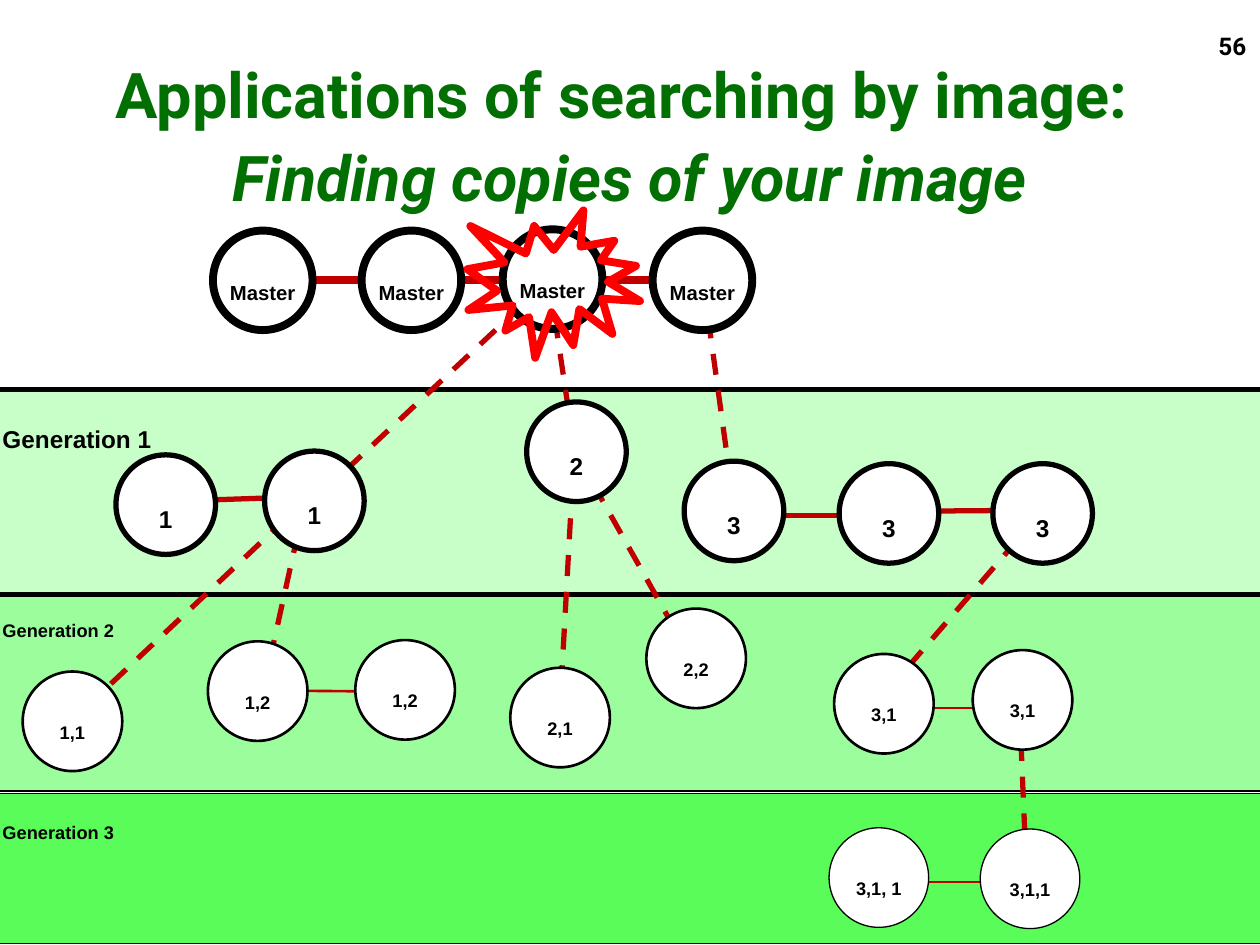
from pptx import Presentation
from pptx.dml.color import RGBColor
from pptx.enum.dml import MSO_LINE
from pptx.enum.shapes import MSO_CONNECTOR, MSO_SHAPE
from pptx.enum.text import MSO_ANCHOR as Anchor, MSO_AUTO_SIZE, PP_ALIGN as Align
from pptx.oxml.ns import qn
from pptx.util import Inches, Pt
from lxml.etree import SubElement

COLORS = {
    "title": "026F02", "ink": "000000", "node": "FFFFFF", "link": "C00000",
    "burst": "FF0000", "generation 1": "C8FEC8", "generation 2": "9BFD9B",
    "generation 3": "59FC59",
}

presentation = Presentation()
presentation.slide_width, presentation.slide_height = Inches(10), Inches(7.5)
slide = presentation.slides.add_slide(presentation.slide_layouts[5])
shapes = slide.shapes

# Grid of 100 columns by 75 rows
column = presentation.slide_width / 100
row = presentation.slide_height / 75


def color(name):
    return RGBColor.from_string(COLORS[name])


def write(paragraph, text, font="Arial", size=18, ink="ink", italic=None,
          lowered=True, align=Align.CENTER):
    paragraph.alignment = align
    run = paragraph.add_run()
    run.text = text
    run.font.name, run.font.size = font, Pt(size)
    run.font.bold, run.font.italic = True, italic
    run.font.color.rgb = color(ink)
    if lowered:
        run.font._element.set("baseline", "-25000")


# Title
title = shapes.title
title.left, title.top = int(4.1 * column), int(2.5 * row)
title.width, title.height = int(91.8 * column), int(16.2 * row)
frame = title.text_frame
frame.word_wrap, frame.auto_size = True, MSO_AUTO_SIZE.NONE
frame.vertical_anchor = Anchor.TOP
frame.margin_left = frame.margin_right = frame.margin_bottom = Inches(0.08)
frame.margin_top = Inches(0.13)
paragraph = frame.paragraphs[0]
paragraph.line_spacing, paragraph.space_before = 1.1, Pt(0)
heading = {"font": "Roboto", "size": 36, "ink": "title", "lowered": False}
write(paragraph, "Applications of searching by image: ", **heading)
paragraph.add_line_break()
write(paragraph, "Finding copies of your image", italic=True, **heading)

# Page number
number = shapes.add_textbox(int(79.1 * column), 0, int(20.8 * column), int(5 * row))
number.text_frame.word_wrap = False
number.text_frame.vertical_anchor = Anchor.MIDDLE
write(number.text_frame.paragraphs[0], "56", font="Roboto", size=24, align=Align.RIGHT)

# Generation bands: label, top, height, outline, text size
bands = [
    ("Generation 2", 47, 15.8, 1, 18),
    ("Generation 3", 63, 11.9, 0.75, 18),
    ("Generation 1", 30.9, 16.3, 3, 24),
]
for label, top, height, outline, size in bands:
    band = shapes.add_shape(MSO_SHAPE.RECTANGLE, int(-1.2 * column), int(top * row),
                            int(102.4 * column), int(height * row))
    band.shadow.inherit = False
    band.fill.solid()
    band.fill.fore_color.rgb = color(label.lower())
    band.line.color.rgb, band.line.width = color("ink"), Pt(outline)
    band.text_frame.vertical_anchor = Anchor.TOP
    band.text_frame.margin_left = Inches(0.14)
    write(band.text_frame.paragraphs[0], label, size=size, align=Align.LEFT)

# Links: start column and row, end column and row, by line width and dash
links = {
    (3, True): [  # parent to child
        (80.9, 55.8, 81.5, 70), (24.3, 39.4, 20.9, 54.7), (24.9, 39.1, 5.7, 57.2),
        (45.6, 35.3, 44.4, 57), (45.6, 35.8, 54.9, 52.3), (82.7, 40.6, 70.2, 55.1),
        (43.6, 22.2, 24.9, 39.7), (43.6, 22.3, 45.6, 35.8), (55.8, 22.3, 58.3, 40.5)],
    (4.5, False): [(43.8, 22.2, 55.3, 22.2), (43.8, 22.2, 20.7, 22.2)],
    (3, False): [(54.9, 40.9, 68.8, 40.9), (68.8, 40.6, 81.9, 40.5),
                 (24.9, 39.4, 13.1, 39.8)],
    (1.5, False): [(69.8, 56.2, 80.8, 56.2), (20.7, 54.8, 32.3, 54.9)],
    (0.75, False): [(70, 70, 81.8, 70)],
}
for (width, dashed), ends in links.items():
    for x1, y1, x2, y2 in ends:
        link = shapes.add_connector(MSO_CONNECTOR.STRAIGHT, int(x1 * column),
                                    int(y1 * row), int(x2 * column), int(y2 * row))
        link.line.color.rgb, link.line.width = color("link"), Pt(width)
        if dashed:
            link.line.dash_style = MSO_LINE.DASH
        SubElement(link.line._get_or_add_ln(), qn("a:tailEnd"), type="triangle")
        SubElement(link._element.spPr, qn("a:effectLst"))

# Nodes: label, left, top, by outline and text size
nodes = {
    (4.5, 20): [("Master", 16.9, 18.3), ("Master", 28.7, 18.3),
                ("Master", 39.9, 18.2), ("Master", 51.8, 18.3)],
    (3, 24): [("1", 9.2, 36.1), ("1", 21, 35.8), ("2", 41.8, 31.9),
              ("3", 54.3, 36.6), ("3", 66.6, 36.8), ("3", 78.8, 36.8)],
    (1.5, 18): [("1,1", 1.8, 53.3), ("1,2", 16.5, 50.9), ("1,2", 28.2, 50.8),
                ("2,1", 40.5, 53), ("2,2", 51.3, 48.3),
                ("3,1", 66.2, 51.9), ("3,1", 77.2, 51.6)],
    (0.75, 18): [("3,1, 1", 65.8, 65.7), ("3,1,1", 77.8, 65.8)],
}
for (outline, size), places in nodes.items():
    for label, left, top in places:
        node = shapes.add_shape(MSO_SHAPE.OVAL, int(left * column), int(top * row),
                                int(7.9 * column), int(7.9 * row))
        node.shadow.inherit = False
        node.fill.solid()
        node.fill.fore_color.rgb = color("node")
        node.line.color.rgb, node.line.width = color("ink"), Pt(outline)
        frame = node.text_frame
        frame.word_wrap, frame.vertical_anchor = False, Anchor.MIDDLE
        frame.margin_left = frame.margin_right = Inches(0.04)
        write(frame.paragraphs[0], label, size=size)

# Burst around the third master
burst = shapes.add_shape(MSO_SHAPE.EXPLOSION1, int(37.1 * column), int(16.7 * row),
                         int(13.7 * column), int(11.7 * row))
burst.shadow.inherit = False
burst.fill.background()
burst.line.color.rgb, burst.line.width = color("burst"), Pt(4.5)

presentation.save("out.pptx")
